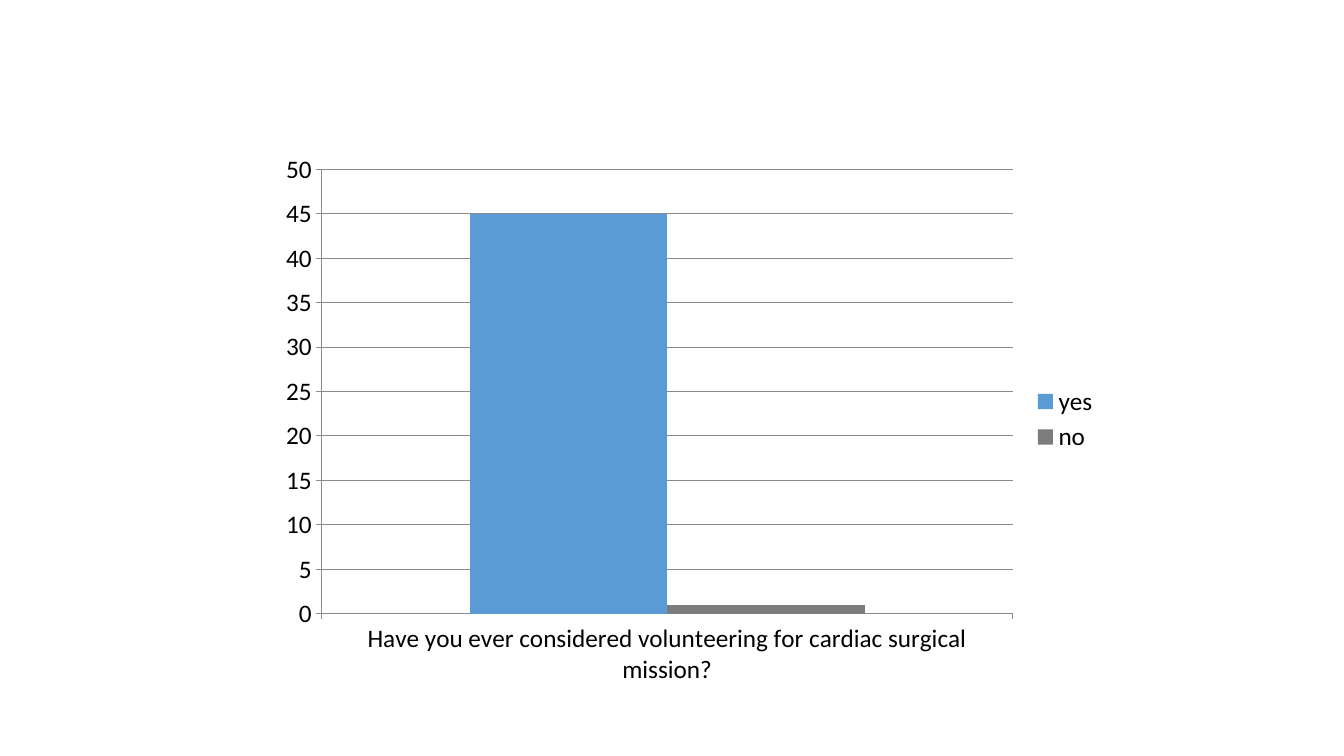
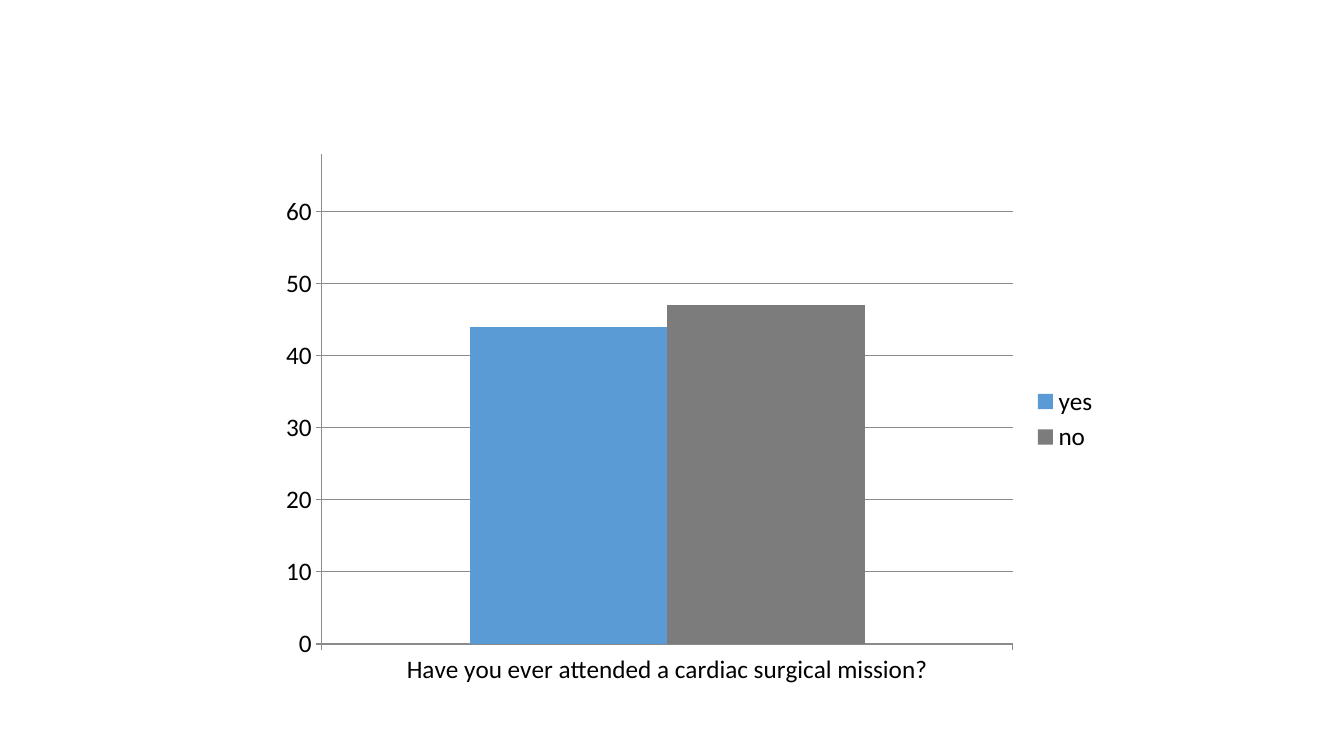
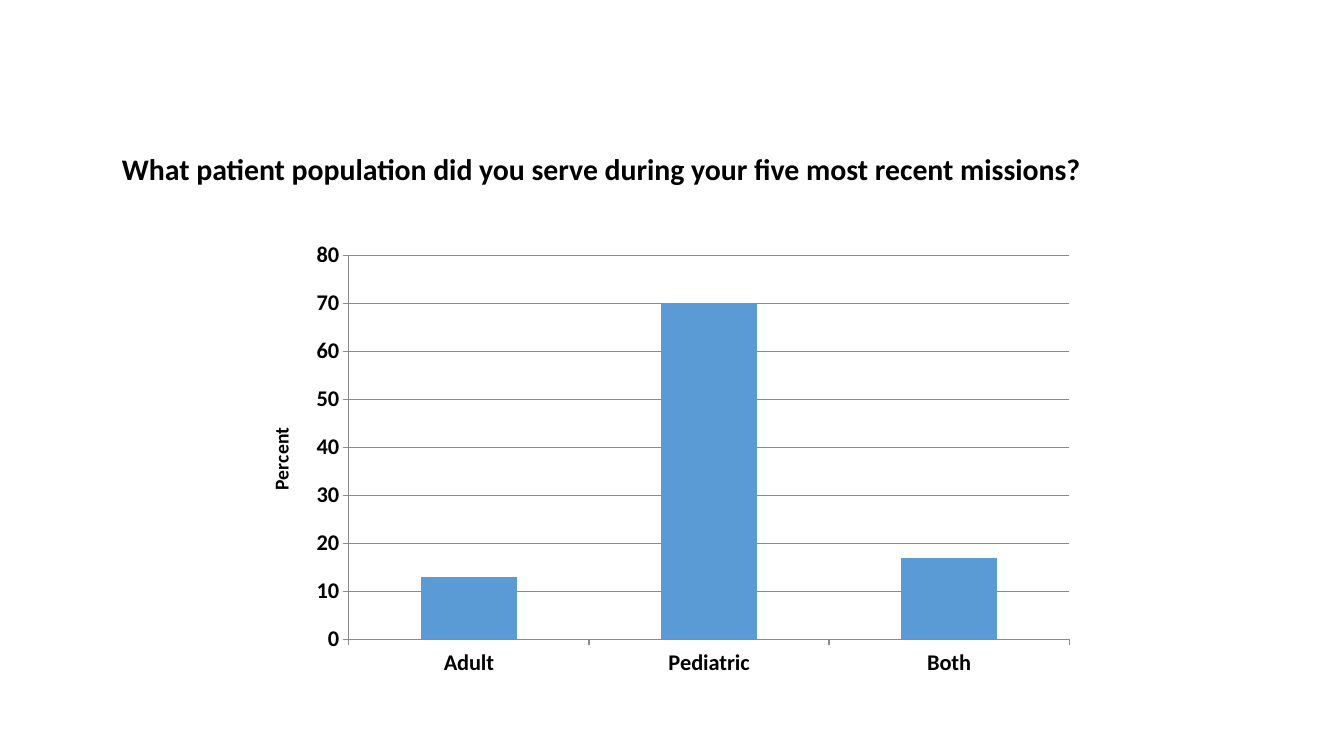
from dataclasses import dataclass

from pptx import Presentation
from pptx.chart.data import CategoryChartData
from pptx.dml.color import RGBColor
from pptx.enum.chart import XL_CHART_TYPE, XL_LEGEND_POSITION, XL_TICK_MARK
from pptx.enum.text import MSO_ANCHOR, MSO_AUTO_SIZE, PP_ALIGN
from pptx.util import Inches, Pt


@dataclass(frozen=True)
class Theme:
    font: str = "Calibri"
    text: RGBColor = RGBColor(0x00, 0x00, 0x00)
    line: RGBColor = RGBColor(0x8B, 0x8B, 0x8B)
    series: tuple = (RGBColor(0x5B, 0x9B, 0xD5), RGBColor(0x7C, 0x7C, 0x7C))
    title_size: float = 21.3
    chart_size: int = 18
    label_size: int = 16
    axis_title_size: int = 14
    line_width: float = 0.75


THEME = Theme()
TITLE_ONLY, BLANK = 5, 6
TITLE_BOX = (1.11, 0.86, 12, 1.67)
ANSWER_BOX = (2.67, 1.42, 8.33, 5.48)
POPULATION_BOX = (2.44, 2.31, 8.33, 4.49)

# Content: one survey question per slide
SURVEY = [
    {
        "box": ANSWER_BOX,
        "categories": ["Have you ever considered volunteering for cardiac surgical mission?"],
        "series": {"yes": [45], "no": [1]},
        "scale": (50, 5),
    },
    {
        "box": ANSWER_BOX,
        "categories": ["Have you ever attended a cardiac surgical mission?"],
        "series": {"yes": [44], "no": [47]},
        "scale": (68, 10),
    },
    {
        "title": "What patient population did you serve during your five most recent missions?",
        "box": POPULATION_BOX,
        "type": XL_CHART_TYPE.COLUMN_STACKED,
        "categories": ["Adult", "Pediatric", "Both"],
        "series": {"Series 1": [13, 70, 17]},
        "scale": (80, 10),
        "axis_title": "Percent",
    },
]


def apply(target, values):
    for name, value in values.items():
        setattr(target, name, value)


def style_font(font, size, bold=False):
    apply(font, {"name": THEME.font, "size": Pt(size), "bold": bold})
    font.color.rgb = THEME.text


def style_line(line):
    line.color.rgb = THEME.line
    line.width = Pt(THEME.line_width)


def add_title(page, text):
    title = page.shapes.title
    apply(title, dict(zip(("left", "top", "width", "height"), map(Inches, TITLE_BOX))))
    frame = title.text_frame
    apply(frame, {"word_wrap": True, "auto_size": MSO_AUTO_SIZE.NONE,
                  "vertical_anchor": MSO_ANCHOR.MIDDLE})
    para = frame.paragraphs[0]
    apply(para, {"alignment": PP_ALIGN.LEFT, "line_spacing": 0.9})
    span = para.add_run()
    span.text = text
    style_font(span.font, THEME.title_size, bold=True)


def add_axis_title(axis, text):
    frame = axis.axis_title.text_frame
    frame._txBody.bodyPr.set("rot", "-5400000")
    span = frame.paragraphs[0].add_run()
    span.text = text
    style_font(span.font, THEME.axis_title_size, bold=True)


def add_survey_chart(page, question):
    data = CategoryChartData()
    data.categories = question["categories"]
    for name, values in question["series"].items():
        data.add_series(name, values)
    kind = question.get("type", XL_CHART_TYPE.COLUMN_CLUSTERED)
    chart = page.shapes.add_chart(kind, *map(Inches, question["box"]), data).chart
    style_font(chart.font, THEME.chart_size)
    chart.has_title = False

    # Columns
    plot = chart.plots[0]
    stacked = kind == XL_CHART_TYPE.COLUMN_STACKED
    apply(plot, {"gap_width": 150, "overlap": 100 if stacked else 0, "vary_by_categories": False})
    for series, color in zip(plot.series, THEME.series):
        series.format.fill.solid()
        series.format.fill.fore_color.rgb = color

    # Axes
    value_axis = chart.value_axis
    maximum, step = question["scale"]
    apply(value_axis, {"minimum_scale": 0, "maximum_scale": maximum, "major_unit": step,
                       "has_major_gridlines": True})
    style_line(value_axis.major_gridlines.format.line)
    for axis in (chart.category_axis, value_axis):
        apply(axis, {"major_tick_mark": XL_TICK_MARK.OUTSIDE, "minor_tick_mark": XL_TICK_MARK.NONE})
        style_line(axis.format.line)
        if stacked:
            style_font(axis.tick_labels.font, THEME.label_size, bold=True)
    if "axis_title" in question:
        add_axis_title(value_axis, question["axis_title"])

    # Legend
    chart.has_legend = len(question["series"]) > 1
    if chart.has_legend:
        apply(chart.legend, {"position": XL_LEGEND_POSITION.RIGHT, "include_in_layout": False})


def main():
    deck = Presentation()
    apply(deck, {"slide_width": Inches(13.33), "slide_height": Inches(7.5)})
    for question in SURVEY:
        layout = TITLE_ONLY if "title" in question else BLANK
        page = deck.slides.add_slide(deck.slide_layouts[layout])
        add_survey_chart(page, question)
        if "title" in question:
            add_title(page, question["title"])
    deck.save("out.pptx")


if __name__ == "__main__":
    main()
